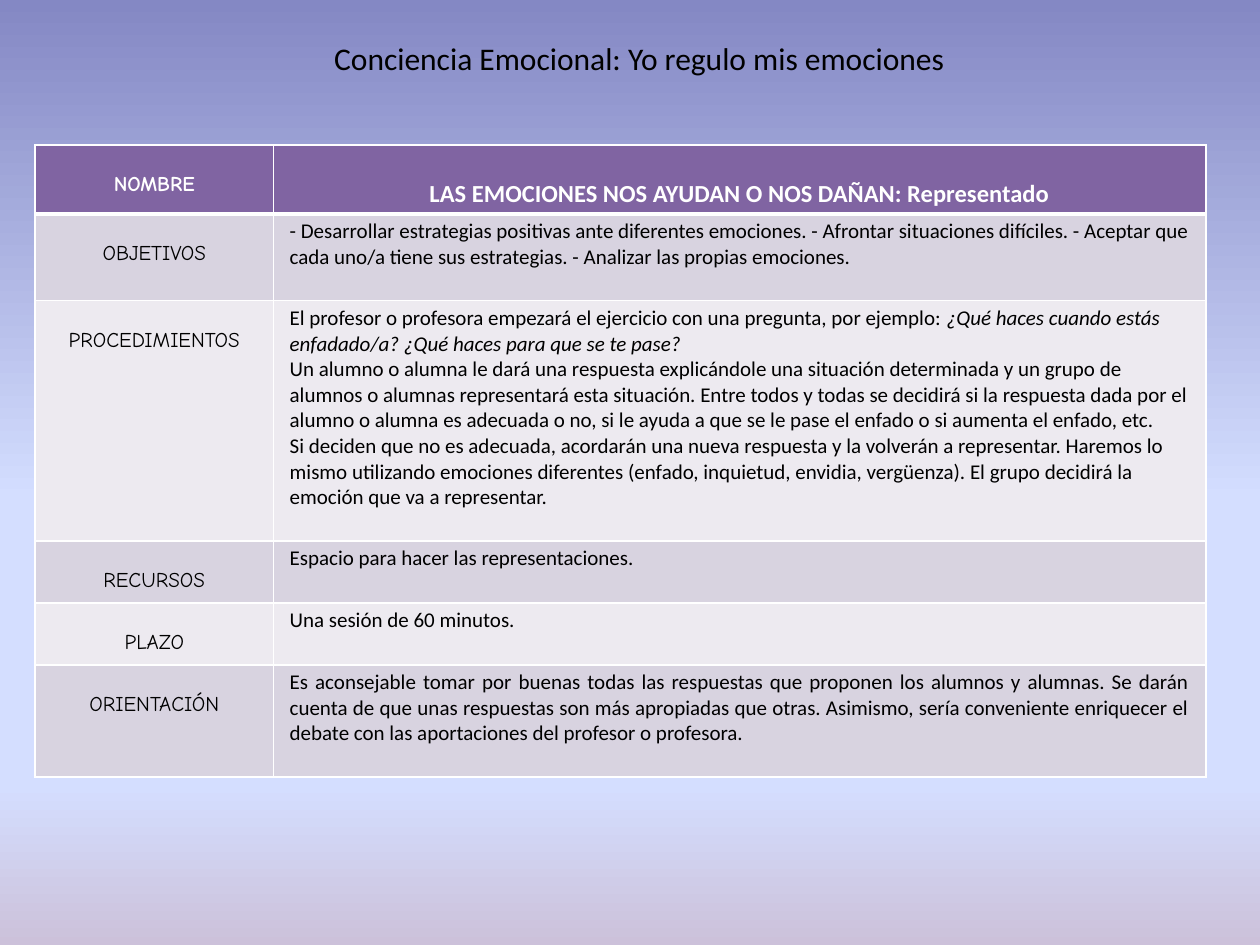
from dataclasses import dataclass

import lxml.etree
import pptx
import pptx.dml.color
import pptx.enum.text
import pptx.oxml
import pptx.oxml.ns
import pptx.util

Cm = pptx.util.Cm
Pt = pptx.util.Pt
RGBColor = pptx.dml.color.RGBColor
ALIGN = pptx.enum.text.PP_ALIGN
qn = pptx.oxml.ns.qn

BLACK = RGBColor(0x00, 0x00, 0x00)
WHITE = RGBColor(0xFF, 0xFF, 0xFF)
PURPLE = RGBColor(0x80, 0x64, 0xA2)
BAND_DARK = RGBColor(0xD8, 0xD3, 0xE0)
BAND_LIGHT = RGBColor(0xED, 0xEA, 0xF0)
SKY = RGBColor(0xD4, 0xDE, 0xFF)
BACKGROUND_STOPS = (
    (0, RGBColor(0x84, 0x88, 0xC4)),
    (53, SKY),
    (83, SKY),
    (100, RGBColor(0xCC, 0xC1, 0xDA)),
)

LABEL_FORMAT = {"name": "Comic Neue", "size": Pt(12), "bold": False}
BODY_FORMAT = {"name": "Calibri", "size": Pt(12), "bold": False}
HEADER_FORMAT = {"name": "Calibri", "size": Pt(14), "bold": True}
TITLE_FORMAT = {"name": "Calibri", "size": Pt(18), "bold": False}

COLUMN_WIDTHS = (4.8, 18.8)
LABEL_TOP = 0.57
HEADER_TOP = 0.69
TEXT_TOP = 0.1


@dataclass
class Row:
    label: str
    height: float
    paragraphs: list[list[str]]  # every second piece of a paragraph is italic
    alignment: ALIGN = ALIGN.LEFT


ROWS = [
    Row("NOMBRE", 1.37, [["LAS EMOCIONES NOS AYUDAN O NOS DAÑAN: Representado"]], ALIGN.CENTER),
    Row("OBJETIVOS", 1.75, [[
        "- Desarrollar estrategias positivas ante diferentes emociones. "
        "- Afrontar situaciones difíciles. - Aceptar que cada uno/a tiene sus "
        "estrategias. - Analizar las propias emociones."]]),
    Row("PROCEDIMIENTOS", 4.84, [
        ["El profesor o profesora empezará el ejercicio con una pregunta, por ejemplo: ",
         "¿Qué haces cuando estás enfadado/a? ¿Qué haces para que se te pase?"],
        ["Un alumno o alumna le dará una respuesta explicándole una situación "
         "determinada y un grupo de alumnos o alumnas representará esta situación. "
         "Entre todos y todas se decidirá si la respuesta dada por el alumno o alumna "
         "es adecuada o no, si le ayuda a que se le pase el enfado o si aumenta el "
         "enfado, etc."],
        ["Si deciden que no es adecuada, acordarán una nueva respuesta y la volverán a "
         "representar. Haremos lo mismo utilizando emociones diferentes (enfado, "
         "inquietud, envidia, vergüenza). El grupo decidirá la emoción que va a "
         "representar."]]),
    Row("RECURSOS", 1.25, [["Espacio para hacer las representaciones."]]),
    Row("PLAZO", 1.25, [["Una sesión de 60 minutos."]]),
    Row("ORIENTACIÓN", 2.26, [[
        "Es aconsejable tomar por buenas todas las respuestas que proponen los alumnos "
        "y alumnas. Se darán cuenta de que unas respuestas son más apropiadas que otras. "
        "Asimismo, sería conveniente enriquecer el debate con las aportaciones del "
        "profesor o profesora."]], ALIGN.JUSTIFY),
]


def set_attributes(target: object, values: dict) -> None:
    for name, value in values.items():
        setattr(target, name, value)


def write_text(frame, paragraphs: list[list[str]], alignment: ALIGN,
               font_format: dict, color: RGBColor) -> None:
    for index, pieces in enumerate(paragraphs):
        paragraph = frame.add_paragraph() if index else frame.paragraphs[0]
        paragraph.alignment = alignment
        for position, piece in enumerate(pieces):
            run = paragraph.add_run()
            run.text = piece
            set_attributes(run.font, {**font_format, "italic": position % 2 == 1})
            run.font.color.rgb = color


def add_solid_color(parent, color: RGBColor) -> None:
    lxml.etree.SubElement(parent, qn("a:srgbClr")).set("val", str(color))


def set_borders(cell, widths: dict[str, int]) -> None:
    properties = cell._tc.get_or_add_tcPr()
    for side, width in widths.items():
        line = lxml.etree.SubElement(properties, qn(f"a:ln{side}"))
        line.set("w", str(Pt(width)))
        add_solid_color(lxml.etree.SubElement(line, qn("a:solidFill")), WHITE)


def paint_background(slide) -> None:
    fill = slide.background.fill
    fill.gradient()
    fill.gradient_angle = 270
    stops = slide._element.find(".//" + qn("a:gsLst"))
    for old_stop in list(stops):
        stops.remove(old_stop)
    for percent, color in BACKGROUND_STOPS:
        stop = lxml.etree.SubElement(stops, qn("a:gs"))
        stop.set("pos", str(percent * 1000))
        add_solid_color(stop, color)


def add_title(slide, text: str) -> None:
    frame = slide.shapes.add_textbox(Cm(5.89), Cm(0.66), Cm(14), Cm(1.02)).text_frame
    set_attributes(frame, {
        "word_wrap": True,
        "auto_size": pptx.enum.text.MSO_AUTO_SIZE.SHAPE_TO_FIT_TEXT,
    })
    write_text(frame, [[text]], ALIGN.CENTER, TITLE_FORMAT, BLACK)


def add_activity_table(slide, rows: list[Row]) -> None:
    table = slide.shapes.add_table(
        len(rows), len(COLUMN_WIDTHS), Cm(0.71), Cm(2.92),
        Cm(sum(COLUMN_WIDTHS)), Cm(sum(row.height for row in rows))).table
    for column, width in zip(table.columns, COLUMN_WIDTHS):
        column.width = Cm(width)

    for index, row in enumerate(rows):
        table.rows[index].height = Cm(row.height)
        is_header = index == 0
        color = WHITE if is_header else BLACK
        fill_color = PURPLE if is_header else (BAND_LIGHT, BAND_DARK)[index % 2]
        borders = {"L": 1, "R": 1, "T": 3 if index == 1 else 1, "B": 3 if is_header else 1}
        label_format = {**LABEL_FORMAT, "bold": is_header}
        text_format = HEADER_FORMAT if is_header else BODY_FORMAT
        text_top = HEADER_TOP if is_header else TEXT_TOP
        contents = (
            ([[row.label]], ALIGN.CENTER, label_format, LABEL_TOP),
            (row.paragraphs, row.alignment, text_format, text_top),
        )
        for column, (paragraphs, alignment, font_format, top) in enumerate(contents):
            cell = table.cell(index, column)
            set_attributes(cell, {
                "margin_left": Cm(0.33), "margin_right": Cm(0.33),
                "margin_top": Cm(top), "margin_bottom": Cm(0.1),
            })
            set_borders(cell, borders)
            cell.fill.solid()
            cell.fill.fore_color.rgb = fill_color
            write_text(cell.text_frame, paragraphs, alignment, font_format, color)


def main() -> None:
    presentation = pptx.Presentation()
    presentation.slide_width = Cm(25.4)
    presentation.slide_height = Cm(19.05)
    slide = presentation.slides.add_slide(presentation.slide_layouts[6])

    # Background, activity sheet and heading
    paint_background(slide)
    add_activity_table(slide, ROWS)
    add_title(slide, "Conciencia Emocional: Yo regulo mis emociones")

    presentation.save("out.pptx")


if __name__ == "__main__":
    main()
